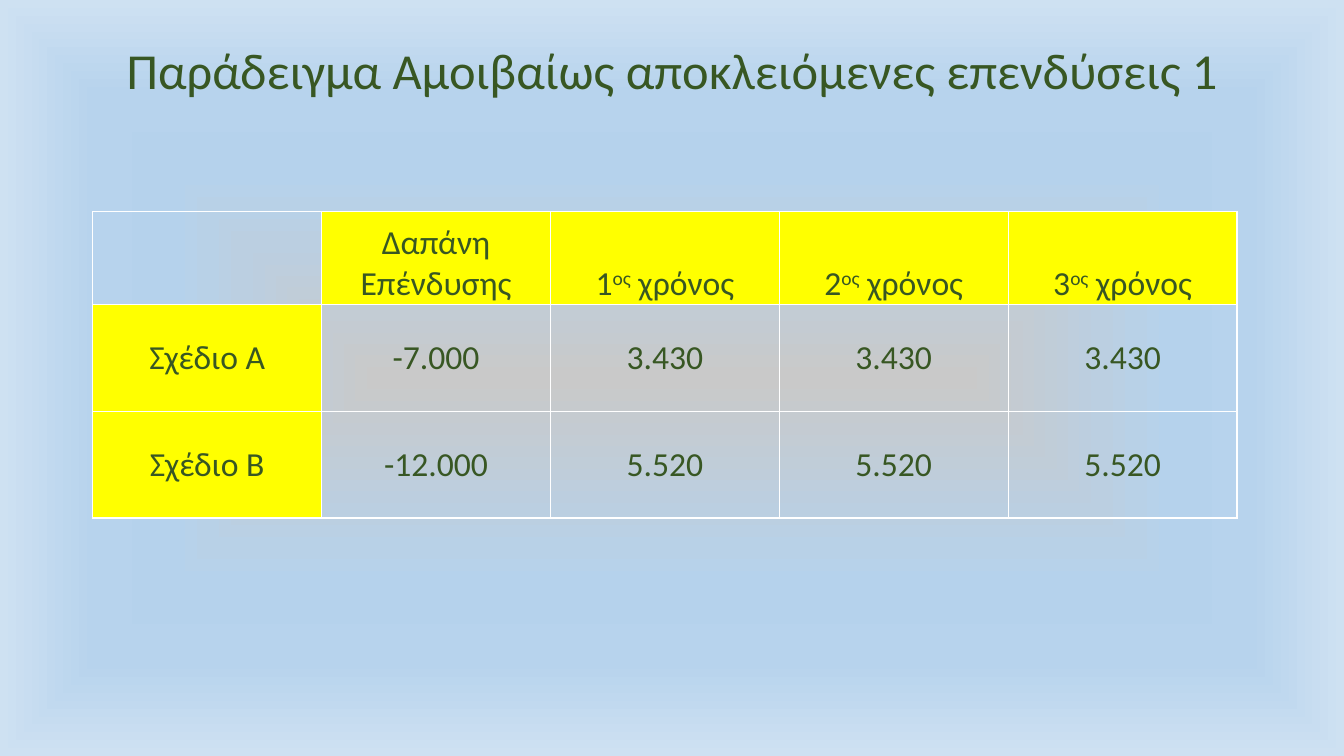
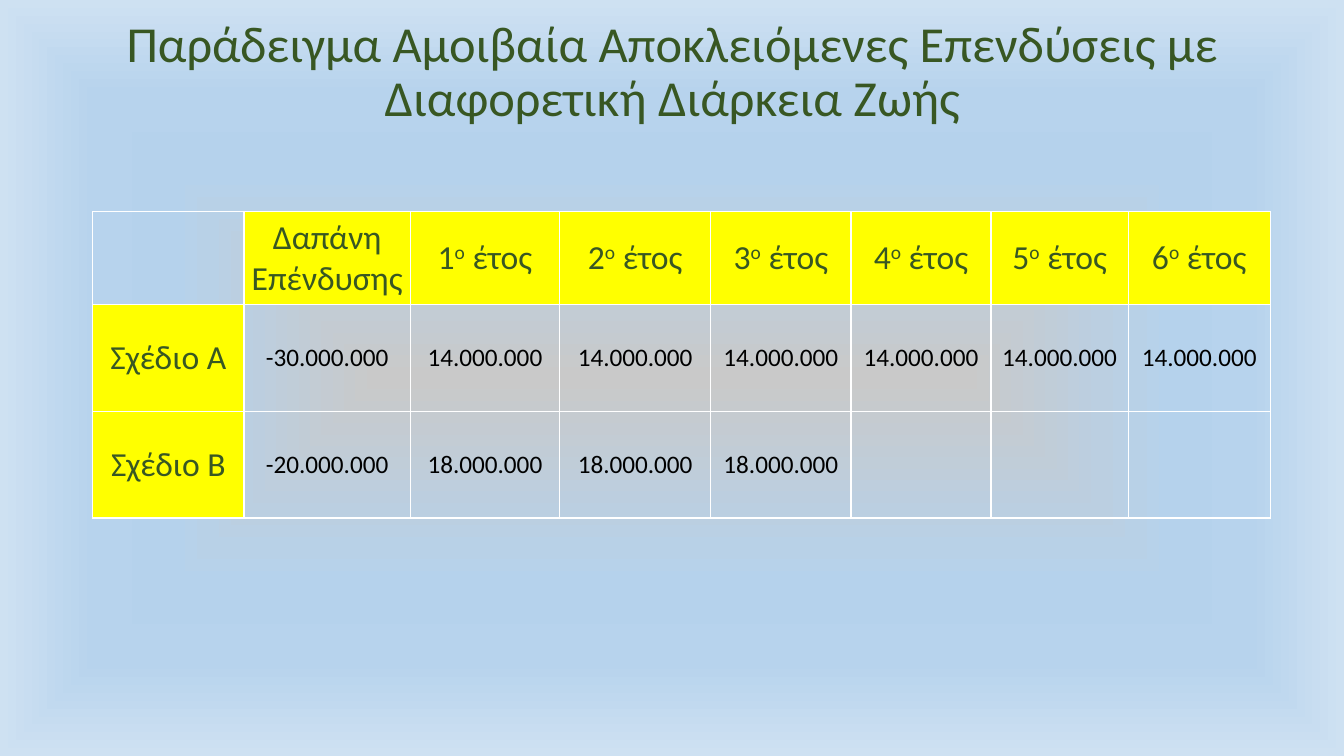
"""Build two slides comparing mutually exclusive investments."""
from pptx import Presentation
from pptx.dml.color import RGBColor
from pptx.enum.text import MSO_ANCHOR, MSO_AUTO_SIZE, PP_ALIGN
from pptx.oxml import parse_xml
from pptx.oxml.ns import nsdecls, qn
from pptx.util import Inches, Pt

GREEN = RGBColor(0x38, 0x57, 0x23)
YELLOW = RGBColor(0xFF, 0xFF, 0x00)
BLACK = RGBColor(0x00, 0x00, 0x00)
WHITE = RGBColor(0xFF, 0xFF, 0xFF)
BACKDROP = [
    (0, RGBColor(0xC9, 0xC9, 0xC9)), (36, RGBColor(0xBB, 0xCF, 0xE1)),
    (45, RGBColor(0xB8, 0xD1, 0xE7)), (54, RGBColor(0xB5, 0xD2, 0xEC)),
    (65, RGBColor(0xB5, 0xD2, 0xEC)), (75, RGBColor(0xB7, 0xD3, 0xED)),
    (100, RGBColor(0xCE, 0xE1, 0xF2)),
]
FONT = "Calibri"
LEFT, TABLE_TOP = 0.92, 2.1
ROW_HEIGHTS = [0.92, 1.06, 1.06]
COST = "Δαπάνη Επένδυσης"

SLIDES = [
    {
        "title": "Παράδειγμα Αμοιβαίως αποκλειόμενες επενδύσεις 1",
        "widths": [2.27] * 5,
        "rows": [
            ["", COST] + [f"{year}^ος^ χρόνος" for year in range(1, 4)],
            ["Σχέδιο Α", "-7.000"] + ["3.430"] * 3,
            ["Σχέδιο Β", "-12.000"] + ["5.520"] * 3,
        ],
        "header_anchor": MSO_ANCHOR.BOTTOM,
        "values": {"size": 24, "color": GREEN},
    },
    {
        "title": "Παράδειγμα Αμοιβαία Αποκλειόμενες Επενδύσεις με Διαφορετική Διάρκεια Ζωής",
        "widths": [1.5, 1.65, 1.48, 1.5, 1.39, 1.39, 1.36, 1.41],
        "rows": [
            ["", COST] + [f"{year}^ο^ έτος" for year in range(1, 7)],
            ["Σχέδιο Α", "-30.000.000"] + ["14.000.000"] * 6,
            ["Σχέδιο Β", "-20.000.000"] + ["18.000.000"] * 3 + [""] * 3,
        ],
        "header_anchor": MSO_ANCHOR.MIDDLE,
        "values": {"size": 18, "color": BLACK},
    },
]


def write(frame, text, size=24, color=GREEN, spacing=None):
    """Write centred text; parts between carets are superscript."""
    para = frame.paragraphs[0]
    para.alignment = PP_ALIGN.CENTER
    if spacing:
        para.line_spacing = spacing
    for index, part in enumerate(text.split("^")):
        span = para.add_run()
        span.text = part
        span.font.name = FONT
        span.font.size = Pt(size)
        span.font.color.rgb = color
        if index % 2:
            span._r.get_or_add_rPr().set("baseline", "30000")


def style_master(master):
    """Give the master its gradient background and title place."""
    master.background.fill.gradient()
    gradient = master.element.find(".//" + qn("a:gradFill"))
    stops = "".join(
        f'<a:gs pos="{position * 1000}"><a:srgbClr val="{color}"/></a:gs>'
        for position, color in BACKDROP)
    gradient.getparent().replace(gradient, parse_xml(
        f'<a:gradFill {nsdecls("a")} rotWithShape="1"><a:gsLst>{stops}</a:gsLst>'
        '<a:path path="shape"><a:fillToRect l="50000" t="50000" r="50000" b="50000"/>'
        '</a:path></a:gradFill>'))
    title = master.placeholders[0]
    title.left, title.top = Inches(LEFT), Inches(0)
    title.width, title.height = Inches(11.5), Inches(1.45)
    title.text_frame.vertical_anchor = MSO_ANCHOR.MIDDLE
    title.text_frame.auto_size = MSO_AUTO_SIZE.NONE


def add_borders(cell):
    """Draw a thin white line on each side of the cell."""
    properties = cell._tc.get_or_add_tcPr()
    for index, side in enumerate(("lnL", "lnR", "lnT", "lnB")):
        properties.insert(index, parse_xml(
            f'<a:{side} {nsdecls("a")} w="{Pt(1)}"><a:solidFill>'
            f'<a:srgbClr val="{WHITE}"/></a:solidFill></a:{side}>'))


def add_grid(page, widths, rows, header_anchor, values):
    """Add the investment table with yellow headings."""
    table = page.shapes.add_table(
        len(rows), len(widths), Inches(LEFT), Inches(TABLE_TOP),
        Inches(sum(widths)), Inches(sum(ROW_HEIGHTS))).table
    table.first_row = table.horz_banding = False
    for column, width in zip(table.columns, widths):
        column.width = Inches(width)
    for row, height in zip(table.rows, ROW_HEIGHTS):
        row.height = Inches(height)
    for row_index, texts in enumerate(rows):
        for column_index, text in enumerate(texts):
            cell = table.cell(row_index, column_index)
            heading = row_index == 0 or column_index == 0
            cell.fill.background()
            if text:
                cell.margin_left = cell.margin_right = cell.margin_top = Inches(0.01)
                cell.margin_bottom = 0
                cell.vertical_anchor = MSO_ANCHOR.MIDDLE if row_index else header_anchor
                write(cell.text_frame, text, **({} if heading else values))
                if heading:
                    cell.fill.solid()
                    cell.fill.fore_color.rgb = YELLOW
            add_borders(cell)


def main():
    """Build and save the deck."""
    deck = Presentation()
    deck.slide_width, deck.slide_height = Inches(13.33), Inches(7.5)
    style_master(deck.slide_master)
    title_only = deck.slide_layouts.get_by_name("Title Only")
    for content in SLIDES:
        page = deck.slides.add_slide(title_only)
        write(page.shapes.title.text_frame, content["title"], size=36, spacing=0.9)
        add_grid(page, content["widths"], content["rows"],
                 content["header_anchor"], content["values"])
    deck.save("out.pptx")


if __name__ == "__main__":
    main()
